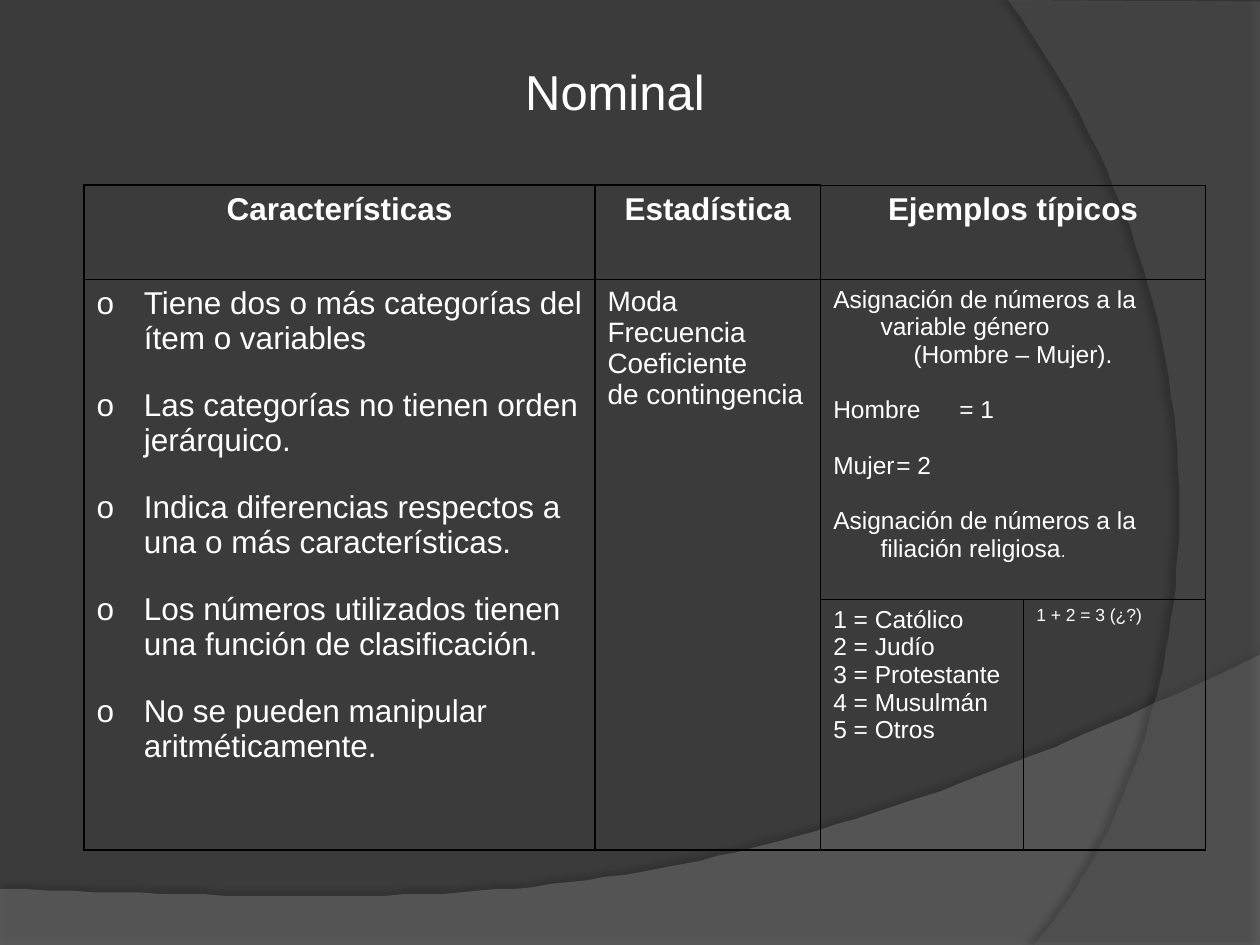
"""Build the slide on the nominal scale of measurement."""
import pptx
import pptx.util
import pptx.oxml
import pptx.oxml.ns
import pptx.dml.color
import pptx.enum.text

Pt = pptx.util.Pt
align = pptx.enum.text.PP_ALIGN
anchor = pptx.enum.text.MSO_ANCHOR
space = pptx.oxml.ns.nsdecls("a")


def paint(fill, color):
    fill.solid()
    fill.fore_color.rgb = pptx.dml.color.RGBColor.from_string(color)


def style(item, form):
    for name, value in form.items():
        setattr(item, name, value)


deck = pptx.Presentation()
style(deck, {"slide_width": Pt(720), "slide_height": Pt(540)})
slide = deck.slides.add_slide(deck.slide_layouts[5])
paint(slide.background.fill, "3B3B3B")

waves = [
    ([(0, 507.6), (0, 540), (720, 540), (720, 374.4)],
     [(402.5, 525), (281.5, 517.7), (0, 507.6)], "7F7F7F", 45, 35, 3.5, 270),
    ([(720, 1.4), (720, 540), (591, 540)],
     [(673, 446), (733, 217), (576, 0)], "5E5E5E", 40, 45, 4, 180),
]
for edge, curve, color, alpha, shade, dist, angle in waves:
    knots = [edge[-1]] + curve
    points = list(edge)
    for step in range(1, 61):
        t = step / 60
        parts = [(1 - t) ** 3, 3 * t * (1 - t) ** 2, 3 * t * t * (1 - t), t ** 3]
        points.append(tuple(sum(w * k[axis] for w, k in zip(parts, knots))
                            for axis in (0, 1)))
    pen = slide.shapes.build_freeform(*points[0], scale=Pt(1))
    pen.add_line_segments(points[1:], close=True)
    wave = pen.convert_to_shape()
    paint(wave.fill, color)
    wave.line.fill.background()
    tint = wave.fill._xPr.find(".//" + pptx.oxml.ns.qn("a:srgbClr"))
    tint.append(pptx.oxml.parse_xml(f'<a:alpha {space} val="{alpha * 1000}"/>'))
    wave._element.spPr.append(pptx.oxml.parse_xml(
        f'<a:effectLst {space}><a:outerShdw blurRad="{Pt(4)}" dist="{Pt(dist)}" '
        f'dir="{angle * 60000}" rotWithShape="0"><a:srgbClr val="000000">'
        f'<a:alpha val="{shade * 1000}"/></a:srgbClr></a:outerShdw></a:effectLst>'))

title = slide.shapes.title
style(title, {"left": Pt(212.4), "top": Pt(31.7), "width": Pt(278), "height": Pt(41)})
title.text_frame.text = "Nominal"
style(title.text_frame, {"vertical_anchor": anchor.MIDDLE, "word_wrap": True})
head = title.text_frame.paragraphs[0]
head.alignment = align.CENTER
style(head.font, {"name": "Arial", "size": Pt(28)})
paint(head.font.fill, "FFFFFF")

wides = [292, 129, 116, 104]
highs = [54, 183, 143]
frame = slide.shapes.add_table(3, 4, Pt(48), Pt(105.8), Pt(sum(wides)), Pt(sum(highs)))
table = frame.table
style(table, {"first_row": False, "horz_banding": False})
for column, wide in zip(table.columns, wides):
    column.width = Pt(wide)
for row, high in zip(table.rows, highs):
    row.height = Pt(high)
for row in range(3):
    for col in range(4):
        cell = table.cell(row, col)
        for side in "LRTB":
            thick = Pt(1 if col < 2 else 0.75)
            cell._tc.get_or_add_tcPr().append(pptx.oxml.parse_xml(
                f'<a:ln{side} {space} w="{thick}"><a:solidFill>'
                f'<a:srgbClr val="000000"/></a:solidFill></a:ln{side}>'))
        cell.fill.background()
for start, end in [((0, 2), (0, 3)), ((1, 0), (2, 0)), ((1, 1), (2, 1)), ((1, 2), (1, 3))]:
    table.cell(*start).merge(table.cell(*end))

traits = ["Tiene dos o más categorías del ítem o variables",
          "Las categorías no tienen orden jerárquico.",
          "Indica diferencias respectos a una o más características.",
          "Los números utilizados tienen una función de clasificación.",
          "No se pueden manipular aritméticamente."]
cases = ["Asignación de números a la variable género", "(Hombre – Mujer).",
         "Hombre\t= 1", "Mujer\t= 2",
         "Asignación de números a la filiación religiosa"]
faiths = ["Católico", "Judío", "Protestante", "Musulmán", "Otros"]
cells = [
    (0, 0, 18, ["Características"], []),
    (0, 1, 18, ["Estadística"], []),
    (0, 2, 18, ["Ejemplos típicos"], []),
    (1, 0, 18, traits, [0, 18, 18, 18, 18]),
    (1, 1, 16, ["Moda", "Frecuencia", "Coeficiente", "de contingencia"], []),
    (1, 2, 14, cases, [0, 0, 16, 16, 16]),
    (2, 2, 14, [f"{rank} = {faith}" for rank, faith in enumerate(faiths, 1)], []),
    (2, 3, 10, ["1 + 2 = 3 (¿?)"], []),
]
for row, col, size, lines, gaps in cells:
    body = table.cell(row, col).text_frame
    for count, line in enumerate(lines):
        para = body.add_paragraph() if count else body.paragraphs[0]
        mid = row == 0 or line.startswith("(")
        style(para, {"alignment": align.CENTER if mid else align.LEFT,
                     "space_before": Pt(gaps[count] if gaps else 0)})
        texts = [(line, size)]
        if line == cases[-1]:
            texts.append((".", 10))
        for text, high in texts:
            run = para.add_run()
            run.text = text
            style(run.font, {"name": "Arial", "size": Pt(high), "bold": row == 0})
            paint(run.font.fill, "FFFFFF")
        props = para._p.get_or_add_pPr()
        hang = 0 if "\t" in line else Pt(27)
        props.set("marL", str(hang))
        props.set("indent", str(-hang))
        extras = []
        if lines is traits:
            extras = ['<a:buFont {} typeface="Arial"/>', '<a:buChar {} char="o"/>']
        elif "\t" in line:
            extras = ['<a:tabLst {}><a:tab pos="' + str(Pt(61)) + '" algn="l"/></a:tabLst>']
        for extra in extras:
            props.append(pptx.oxml.parse_xml(extra.format(space)))

deck.save("out.pptx")
